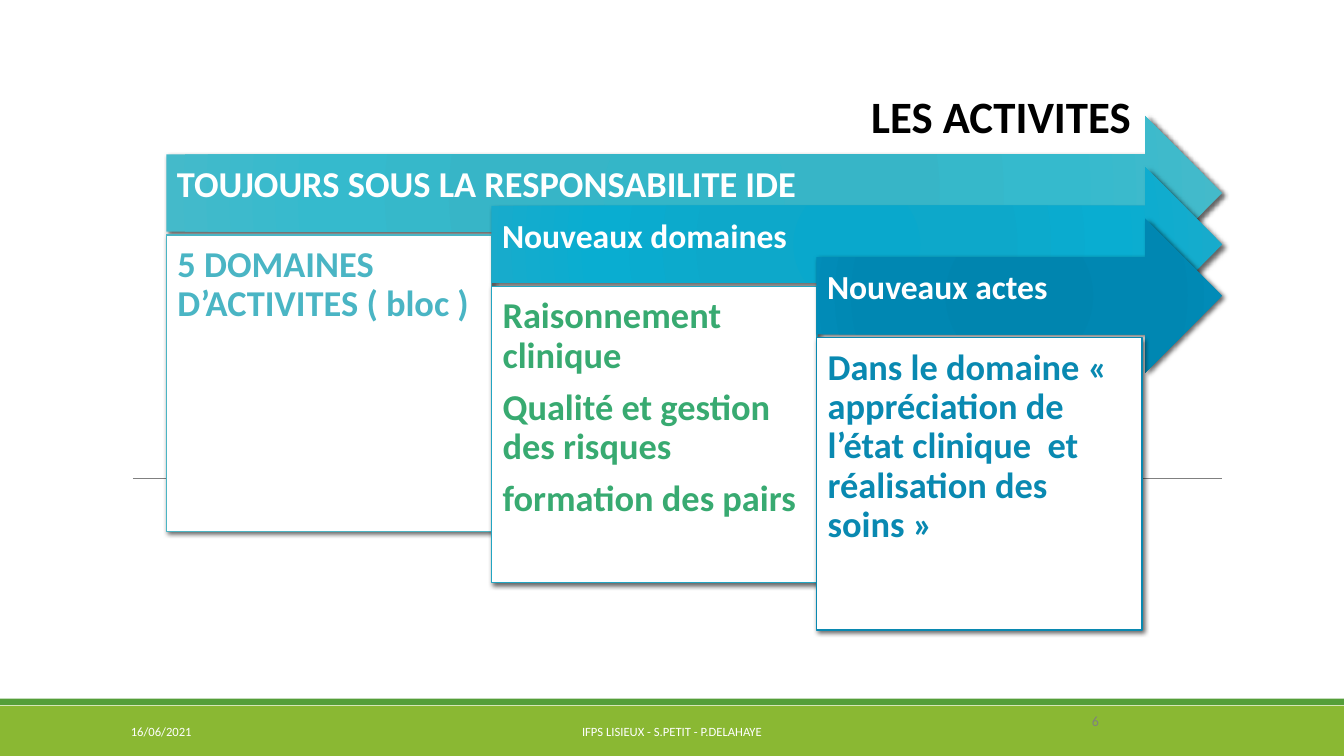
from lxml.etree import SubElement
from pptx import Presentation
from pptx.dml.color import RGBColor
from pptx.enum.shapes import MSO_CONNECTOR, MSO_SHAPE
from pptx.enum.text import MSO_ANCHOR, PP_ALIGN
from pptx.oxml.ns import qn
from pptx.util import Pt

BLACK = RGBColor(0x00, 0x00, 0x00)
WHITE = RGBColor(0xFF, 0xFF, 0xFF)
GREY = RGBColor(0x80, 0x80, 0x80)
LIME = RGBColor(0x8A, 0xB8, 0x33)
GREEN = RGBColor(0x54, 0x9E, 0x39)
JADE = RGBColor(0x38, 0xAA, 0x71)
TEAL = RGBColor(0x4A, 0xB5, 0xC4)
CYAN = RGBColor(0x22, 0xA5, 0xC2)
BLUE = RGBColor(0x09, 0x89, 0xB1)

FONT = "Calibri"
GRADIENT_POSITIONS = (0, 34, 70, 100)

FIRST_LEFT, LEFT_STEP = 118.8, 232.2
FIRST_TOP, TOP_STEP = 82.8, 36.7
ARROW_RIGHT, ARROW_HEIGHT = 873, 110.2
CARD_OFFSET, CARD_WIDTH = 85, 232.5

# Arrow label, its size, gradient, card paragraphs, text colour, border, card height
STAGES = (
    ("TOUJOURS SOUS LA RESPONSABILITE IDE", 26,
     ("34B6C8", "37B5C7", "35BACD", "44BACA"),
     ("5 DOMAINES D’ACTIVITES ( bloc )",), TEAL, TEAL, 211.7),
    ("Nouveaux domaines", 24,
     ("09A8CC", "0DA8CA", "09ADD1", "19ABCB"),
     ("Raisonnement clinique", "Qualité et gestion des risques",
      "formation des pairs"), JADE, CYAN, 211.7),
    ("Nouveaux actes", 24,
     ("0084AD", "0085AF", "0087B2", "018DB9"),
     ("Dans le domaine « appréciation de l’état clinique  et réalisation des soins »",),
     BLUE, BLUE, 208.8),
)


def write(box, lines, size, color, bold=False, align=PP_ALIGN.LEFT,
          anchor=MSO_ANCHOR.MIDDLE, insets=(7.2, 3.6, 7.2, 3.6),
          line_spacing=0.9, space_after=0):
    """Fill a shape with paragraphs; insets are left, top, right, bottom."""
    frame = box.text_frame
    frame.word_wrap = True
    frame.vertical_anchor = anchor
    (frame.margin_left, frame.margin_top,
     frame.margin_right, frame.margin_bottom) = map(Pt, insets)
    frame.text = "\n".join(lines)
    for para in frame.paragraphs:
        para.alignment = align
        para.line_spacing = line_spacing
        para.space_after = Pt(space_after)
        for span in para.runs:
            span.font.name = FONT
            span.font.size = Pt(size)
            span.font.bold = bold
            span.font.color.rgb = color


def add_label(page, text, left, top, width, height, size, color, **style):
    box = page.shapes.add_textbox(Pt(left), Pt(top), Pt(width), Pt(height))
    write(box, [text], size, color, **style)


def add_block(page, preset, left, top, width, height, fill=None):
    """Add a preset shape without outline or theme shadow."""
    block = page.shapes.add_shape(preset, Pt(left), Pt(top), Pt(width), Pt(height))
    block.shadow.inherit = False
    block.line.fill.background()
    if fill is not None:
        block.fill.solid()
        block.fill.fore_color.rgb = fill
    return block


def add_shadow(block):
    effects = block._element.spPr.find(qn("a:effectLst"))
    shadow = SubElement(effects, qn("a:outerShdw"), blurRad=str(Pt(3.5)),
                        dist=str(Pt(2)), dir="2700000", algn="tl", rotWithShape="0")
    color = SubElement(shadow, qn("a:srgbClr"), val="000000")
    SubElement(color, qn("a:alpha"), val="60000")


def fill_radial(block, colors):
    """Give the shape a circular gradient centred on its lower right corner."""
    block.fill.gradient()
    gradient = block._element.spPr.find(qn("a:gradFill"))
    for child in list(gradient):
        gradient.remove(child)
    stops = SubElement(gradient, qn("a:gsLst"))
    for position, color in zip(GRADIENT_POSITIONS, colors):
        stop = SubElement(stops, qn("a:gs"), pos=str(position * 1000))
        SubElement(stop, qn("a:srgbClr"), val=color)
    circle = SubElement(gradient, qn("a:path"), path="circle")
    SubElement(circle, qn("a:fillToRect"), l="100000", t="100000",
               r="100000", b="100000")


def add_arrow(page, left, top, label, size, colors):
    arrow = add_block(page, MSO_SHAPE.RIGHT_ARROW, left, top,
                      ARROW_RIGHT - left, ARROW_HEIGHT)
    fill_radial(arrow, colors)
    add_shadow(arrow)
    write(arrow, [label], size, WHITE, bold=True, insets=(7.6, 7.6, 20, 17.4))


def add_card(page, left, top, height, lines, color, border):
    card = add_block(page, MSO_SHAPE.RECTANGLE, left, top, CARD_WIDTH, height, WHITE)
    card.line.color.rgb = border
    card.line.width = Pt(1)
    add_shadow(card)
    write(card, lines, 26, color, bold=True, anchor=MSO_ANCHOR.TOP,
          insets=(8, 8, 8, 8), space_after=9)


def add_rule(page, left, right, height):
    rule = page.shapes.add_connector(MSO_CONNECTOR.STRAIGHT, Pt(left), Pt(height),
                                     Pt(right), Pt(height))
    rule.line.color.rgb = GREY
    rule.line.width = Pt(0.5)
    SubElement(rule._element.spPr, qn("a:effectLst"))


def add_footer(page):
    add_label(page, "16/06/2021", 86.4, 508.3, 194.4, 28.8, 9, WHITE, line_spacing=1)
    add_label(page, "IFPS LISIEUX - S.PETIT - P.DELAHAYE", 290.2, 508.3, 379.4, 28.8,
              9, WHITE, align=PP_ALIGN.CENTER, line_spacing=1)
    add_label(page, "6", 720, 500.5, 72, 28.8, 10, GREY,
              align=PP_ALIGN.RIGHT, line_spacing=1)


def main():
    deck = Presentation()
    deck.slide_width, deck.slide_height = Pt(960), Pt(540)
    page = deck.slides.add_slide(deck.slide_layouts[6])

    add_block(page, MSO_SHAPE.RECTANGLE, 0, 504, 960, 36, LIME)
    add_block(page, MSO_SHAPE.RECTANGLE, 0, 499, 960, 4.6, GREEN)
    add_rule(page, 95, 872.6, 342)
    add_label(page, "LES ACTIVITES", 162.7, 32.4, 652.3, 73.4, 32, BLACK, bold=True,
              align=PP_ALIGN.RIGHT, anchor=MSO_ANCHOR.BOTTOM)

    for index, stage in enumerate(STAGES):
        label, size, colors, lines, color, border, height = stage
        left = FIRST_LEFT + index * LEFT_STEP
        top = FIRST_TOP + index * TOP_STEP
        add_arrow(page, left, top, label, size, colors)
        add_card(page, left, top + CARD_OFFSET, height, lines, color, border)

    add_footer(page)
    deck.save("out.pptx")


if __name__ == "__main__":
    main()
